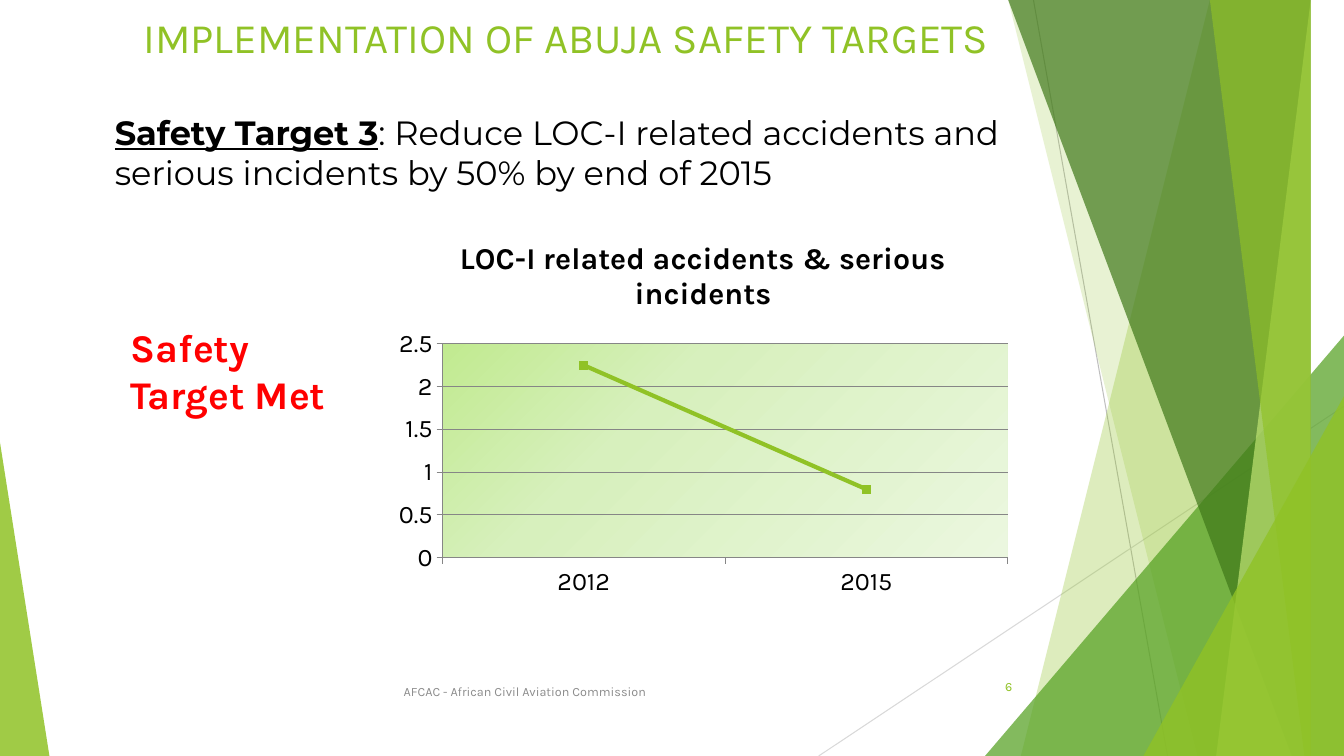
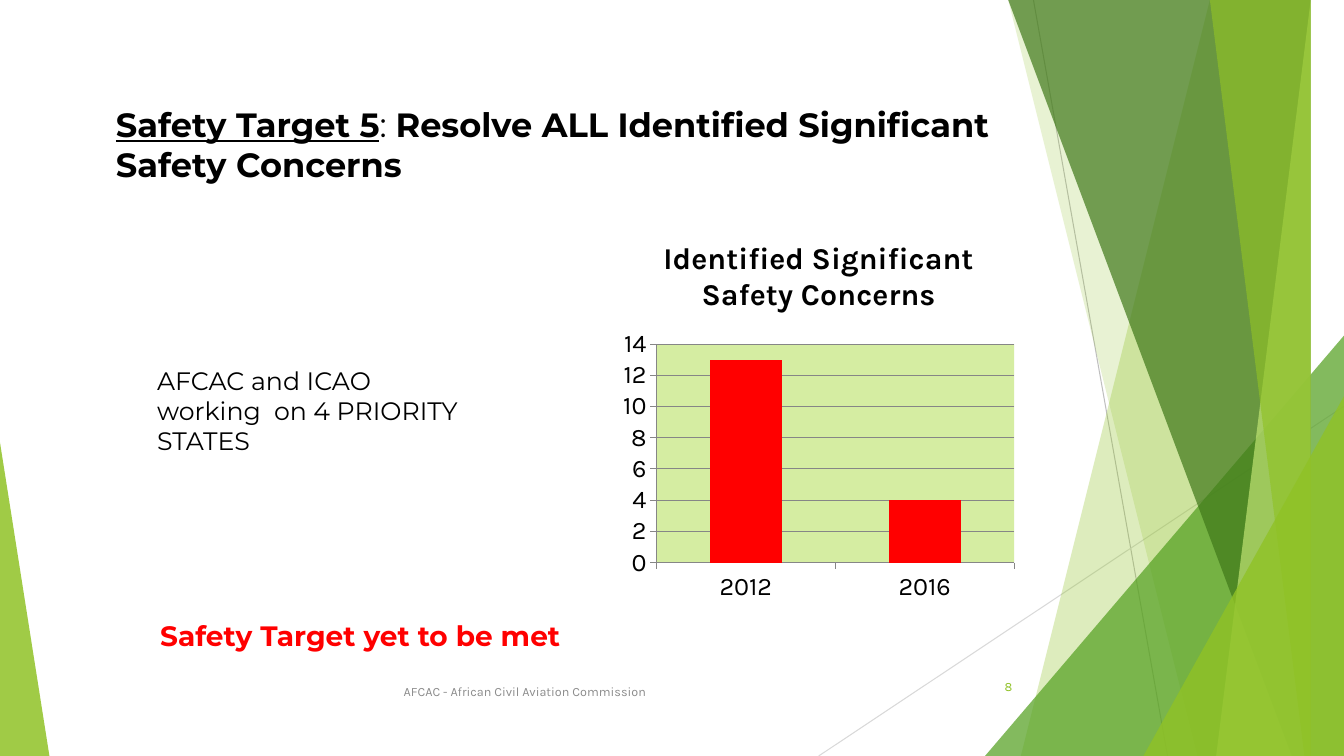
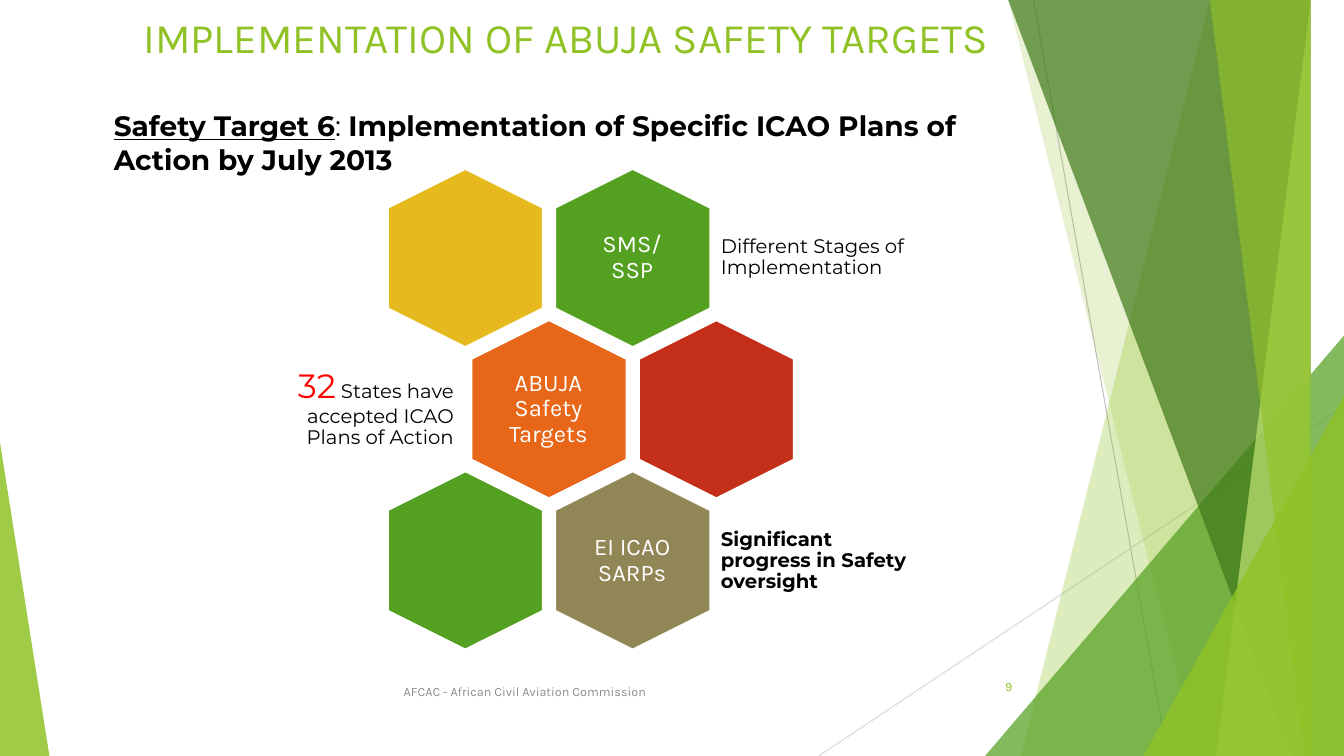
from dataclasses import dataclass

from lxml import etree
from pptx import Presentation
from pptx.chart.data import CategoryChartData
from pptx.dml.color import RGBColor
from pptx.enum.chart import XL_CHART_TYPE as ChartType, XL_MARKER_STYLE as Marker, XL_TICK_MARK as Tick
from pptx.enum.shapes import MSO_CONNECTOR as Connector, MSO_SHAPE as Preset
from pptx.enum.text import MSO_ANCHOR as Anchor, MSO_AUTO_SIZE as AutoSize, PP_ALIGN as Align
from pptx.oxml.ns import qn
from pptx.util import Inches, Pt


@dataclass(frozen=True)
class Theme:
    width: float = 13.33
    height: float = 7.5
    display: str = "Karla"
    text: str = "Montserrat"
    lime: str = "90C226"
    pale_lime: str = "C0E474"
    plot_lime: str = "D5EDA2"
    green: str = "54A021"
    dark_green: str = "3F7819"
    yellow: str = "E6B91E"
    orange: str = "E76618"
    brick: str = "C42F1A"
    olive: str = "918655"
    red: str = "FF0000"
    black: str = "000000"
    white: str = "FFFFFF"
    gray: str = "8C8C8C"
    axis: str = "868686"
    rule: str = "BFBFBF"
    pale_rule: str = "D9D9D9"
    title_size: float = 30
    verdict_size: float = 28
    heading_size: float = 24
    chart_title_size: float = 21.6
    small_heading_size: float = 20
    body_size: float = 18
    hexagon_size: float = 17
    note_size: float = 14
    footer_size: float = 9


THEME = Theme()
TITLE = "IMPLEMENTATION OF ABUJA SAFETY TARGETS"
FOOTER = "AFCAC - African Civil Aviation Commission"
PLOT_GRADIENT = ((0, "C1EA90"), (35, "D7F0BD"), (100, "EBF7DF"))


# Formatting
def set_font(font, color=THEME.black, **values):
    for name, value in values.items():
        setattr(font, name, Pt(value) if name == "size" else value)
    font.color.rgb = RGBColor.from_string(color)


def style(size, color=THEME.black, name=THEME.text, **more):
    return dict(size=size, color=color, name=name, **more)


def paint(shape, color, opacity=100):
    shape.shadow.inherit = False
    shape.fill.solid()
    shape.fill.fore_color.rgb = RGBColor.from_string(color)
    shape.line.fill.background()
    if opacity < 100:
        tint = shape.element.spPr.find(qn("a:solidFill"))[0]
        etree.SubElement(tint, qn("a:alpha"), val=str(opacity * 1000))
    return shape


def color_line(line, color, width):
    line.color.rgb = RGBColor.from_string(color)
    line.width = Pt(width)


# Text
def write(shape, spans, align=Align.LEFT, anchor=Anchor.TOP, inset=None, spacing=None):
    frame = shape.text_frame
    frame.word_wrap = True
    frame.auto_size = AutoSize.NONE
    frame.vertical_anchor = anchor
    if inset is not None:
        for side in ("left", "top", "right", "bottom"):
            setattr(frame, f"margin_{side}", Inches(inset))
    para = frame.paragraphs[0]
    para.alignment = align
    if spacing:
        para.line_spacing = spacing
    for text, values in spans:
        span = para.add_run()
        span.text = text
        set_font(span.font, **values)
    return shape


def add_text(page, box, spans, **layout):
    return write(page.shapes.add_textbox(*map(Inches, box)), spans, **layout)


def fill_title(page, box, spans, **layout):
    title = page.shapes.title
    title.left, title.top, title.width, title.height = map(Inches, box)
    return write(title, spans, **layout)


def target_spans(number, text, size, bold=True):
    plain = style(size, bold=False, underline=False)
    return [(f"Safety Target {number}", style(size, bold=True, underline=True)),
            (": ", plain), (text, {**plain, "bold": bold})]


# Shared backdrop
def add_rule(page, ends, color):
    rule = page.shapes.add_connector(Connector.STRAIGHT, *map(Inches, ends))
    color_line(rule.line, color, 0.75)
    etree.SubElement(rule.element.spPr, qn("a:effectLst"))
    return rule


def add_strip(page, edge, color, opacity):
    top_x, bottom_x = edge
    builder = page.shapes.build_freeform(top_x, -0.01, scale=Inches(1))
    builder.add_line_segments([(THEME.width, -0.01), (THEME.width, THEME.height),
                               (bottom_x, THEME.height)], close=True)
    return paint(builder.convert_to_shape(), color, opacity)


def add_wedge(page, outline, color, opacity):
    left, top, width, peak = outline
    wedge = page.shapes.add_shape(Preset.ISOSCELES_TRIANGLE, Inches(left), Inches(top),
                                  Inches(width), Inches(THEME.height - top))
    wedge.adjustments[0] = peak
    return paint(wedge, color, opacity)


def build_master(deck, page):
    """Draw the shared parts on a page, then move them to the slide master."""
    facets = (
        (add_rule, (10.25, 0, 11.58, 7.5), THEME.rule),
        (add_rule, (13.33, 4.03, 8.12, 7.5), THEME.pale_rule),
        (add_strip, (12.28, 10.04), THEME.lime, 30),
        (add_strip, (10.5, 11.83), THEME.lime, 20),
        (add_wedge, (9.77, 3.33, 3.56, 1), THEME.green, 72),
        (add_strip, (10.21, 12.91), THEME.dark_green, 70),
        (add_strip, (13.03, 11.92), THEME.pale_lime, 70),
        (add_strip, (11.96, 13.18), THEME.lime, 65),
        (add_wedge, (11.34, 3.93, 1.99, 1), THEME.lime, 80),
        (add_wedge, (0, 4.39, 0.49, 0), THEME.lime, 85),
    )
    parts = [draw(page, *values) for draw, *values in facets]
    parts.append(add_text(page, (1.01, 6.66, 8.39, 0.4),
                          [(FOOTER, style(THEME.footer_size, THEME.gray, THEME.display))],
                          align=Align.CENTER, anchor=Anchor.MIDDLE))
    for number, part in enumerate(parts, 100):
        part.element.xpath(".//p:cNvPr")[0].set("id", str(number))
        deck.slide_master.shapes.element.append(part.element)


def add_page(deck, number):
    page = deck.slides.add_slide(deck.slide_layouts.get_by_name("Title Only"))
    add_text(page, (9.39, 6.61, 0.75, 0.4),
             [(str(number), style(THEME.footer_size, THEME.lime, THEME.display))],
             align=Align.RIGHT, anchor=Anchor.MIDDLE)
    return page


def add_main_title(page):
    fill_title(page, (1.09, 0.06, 9.05, 0.72),
               [(TITLE, style(THEME.title_size, THEME.lime, THEME.display))], align=Align.CENTER)


# Charts
def fill_plot(chart, stops, angle=45):
    area = chart.element.find(qn("c:chart")).find(qn("c:plotArea"))
    props = etree.SubElement(area, qn("c:spPr"))
    if len(stops) == 1:
        solid = etree.SubElement(props, qn("a:solidFill"))
        etree.SubElement(solid, qn("a:srgbClr"), val=stops[0][1])
        return
    gradient = etree.SubElement(props, qn("a:gradFill"))
    stop_list = etree.SubElement(gradient, qn("a:gsLst"))
    for position, color in stops:
        stop = etree.SubElement(stop_list, qn("a:gs"), pos=str(position * 1000))
        etree.SubElement(stop, qn("a:srgbClr"), val=color)
    etree.SubElement(gradient, qn("a:lin"), ang=str(angle * 60000), scaled="0")


def add_trend_chart(page, kind, box, title, values, plot_stops):
    data = CategoryChartData()
    data.categories = list(values)
    data.add_series("Series 1", list(values.values()))
    chart = page.shapes.add_chart(kind, *map(Inches, box), data).chart
    chart.has_legend = False
    set_font(chart.font, **style(THEME.body_size, name=THEME.display))
    chart.has_title = True
    para = chart.chart_title.text_frame.paragraphs[0]
    span = para.add_run()
    span.text = title
    set_font(span.font, **style(THEME.chart_title_size, name=THEME.display, bold=True))
    chart.chart_title.include_in_layout = False
    for axis in (chart.category_axis, chart.value_axis):
        axis.major_tick_mark = Tick.OUTSIDE
        axis.minor_tick_mark = Tick.NONE
        color_line(axis.format.line, THEME.axis, 0.75)
    chart.value_axis.has_major_gridlines = True
    color_line(chart.value_axis.major_gridlines.format.line, THEME.axis, 0.75)
    chart.plots[0].vary_by_categories = False
    fill_plot(chart, plot_stops)
    return chart.plots[0]


def style_line(series, color):
    series.smooth = False
    color_line(series.format.line, color, 3)
    series.marker.style = Marker.SQUARE
    series.marker.size = 6
    paint_marker = series.marker.format
    paint_marker.fill.solid()
    paint_marker.fill.fore_color.rgb = RGBColor.from_string(color)
    paint_marker.line.fill.background()


# Honeycomb
def add_hexagon(page, row, column, color, label=None):
    left = 3.73 + 1.66 * column + 0.83 * (row % 2)
    top = 1.79 + 1.5 * row
    hexagon = page.shapes.add_shape(Preset.HEXAGON, *map(Inches, (left, top, 1.77, 1.54)))
    hexagon.rotation = 90
    hexagon.adjustments[0] = 0.25
    paint(hexagon, color)
    color_line(hexagon.line, THEME.white, 1.5)
    if label:
        add_text(page, (left + 0.35, top + 0.16, 1.06, 1.22),
                 [(label, style(THEME.hexagon_size, THEME.white, THEME.display))],
                 align=Align.CENTER, anchor=Anchor.MIDDLE, inset=0.07, spacing=0.9)


def add_note(page, box, spans, align=Align.LEFT, inset=0.06):
    add_text(page, box, spans, align=align, anchor=Anchor.MIDDLE, inset=inset, spacing=0.9)


# Slides
def build_loss_of_control(page):
    add_main_title(page)
    plot = add_trend_chart(page, ChartType.LINE_MARKERS, (3.83, 2.17, 6.29, 3.83),
                           "LOC-I related accidents & serious incidents",
                           {"2012": 2.25, "2015": 0.8}, PLOT_GRADIENT)
    style_line(plot.series[0], THEME.lime)
    add_text(page, (1.04, 1.06, 9.49, 0.91), target_spans(
        3, "Reduce LOC-I related accidents and serious incidents by 50% by end of 2015",
        THEME.heading_size, bold=False))
    add_text(page, (1.2, 3.16, 2.48, 1.04),
             [("Safety Target Met", style(THEME.verdict_size, THEME.red, THEME.display, bold=True))])


def build_safety_concerns(page):
    fill_title(page, (1.05, 0.98, 9.62, 0.91), target_spans(
        5, "Resolve ALL Identified Significant Safety Concerns", THEME.heading_size))
    plot = add_trend_chart(page, ChartType.COLUMN_CLUSTERED, (6.1, 2.17, 4.04, 3.88),
                           "Identified Significant Safety Concerns",
                           {"2012": 13, "2016": 4}, [(0, THEME.plot_lime)])
    plot.gap_width = 150
    fill = plot.series[0].format.fill
    fill.solid()
    fill.fore_color.rgb = RGBColor.from_string(THEME.red)
    add_text(page, (1.46, 3.57, 3.38, 1.01),
             [("AFCAC and ICAO working  on 4 PRIORITY STATES", style(THEME.body_size))])
    add_text(page, (1.49, 6.09, 4.78, 0.74),
             [("Safety Target yet to be met",
               style(THEME.small_heading_size, THEME.red, bold=True))])


def build_plans_of_action(page):
    add_main_title(page)
    for cell in ((0, 0, THEME.yellow), (0, 1, THEME.green, "SMS/SSP"),
                 (1, 0, THEME.orange, "ABUJA Safety Targets"), (1, 1, THEME.brick),
                 (2, 0, THEME.green), (2, 1, THEME.olive, "EI ICAO SARPs")):
        add_hexagon(page, *cell)
    note = style(THEME.note_size)
    add_note(page, (7.09, 2.03, 1.98, 1.06), [("Different Stages of Implementation", note)])
    add_note(page, (2.69, 3.53, 1.91, 1.06),
             [("32", style(THEME.heading_size, THEME.red)),
              (" States have accepted ICAO Plans of Action", note)],
             align=Align.RIGHT, inset=0.1)
    add_note(page, (7.09, 5.04, 1.98, 1.06),
             [("Significant progress in Safety oversight", {**note, "bold": True})])
    add_text(page, (1.03, 1.03, 9.19, 0.77), target_spans(
        6, "Implementation of Specific ICAO Plans of Action by July 2013",
        THEME.small_heading_size))


def main():
    deck = Presentation()
    deck.slide_width, deck.slide_height = Inches(THEME.width), Inches(THEME.height)
    builders = {6: build_loss_of_control, 8: build_safety_concerns, 9: build_plans_of_action}
    for number, build in builders.items():
        build(add_page(deck, number))
    build_master(deck, deck.slides[0])
    deck.save("out.pptx")


if __name__ == "__main__":
    main()
